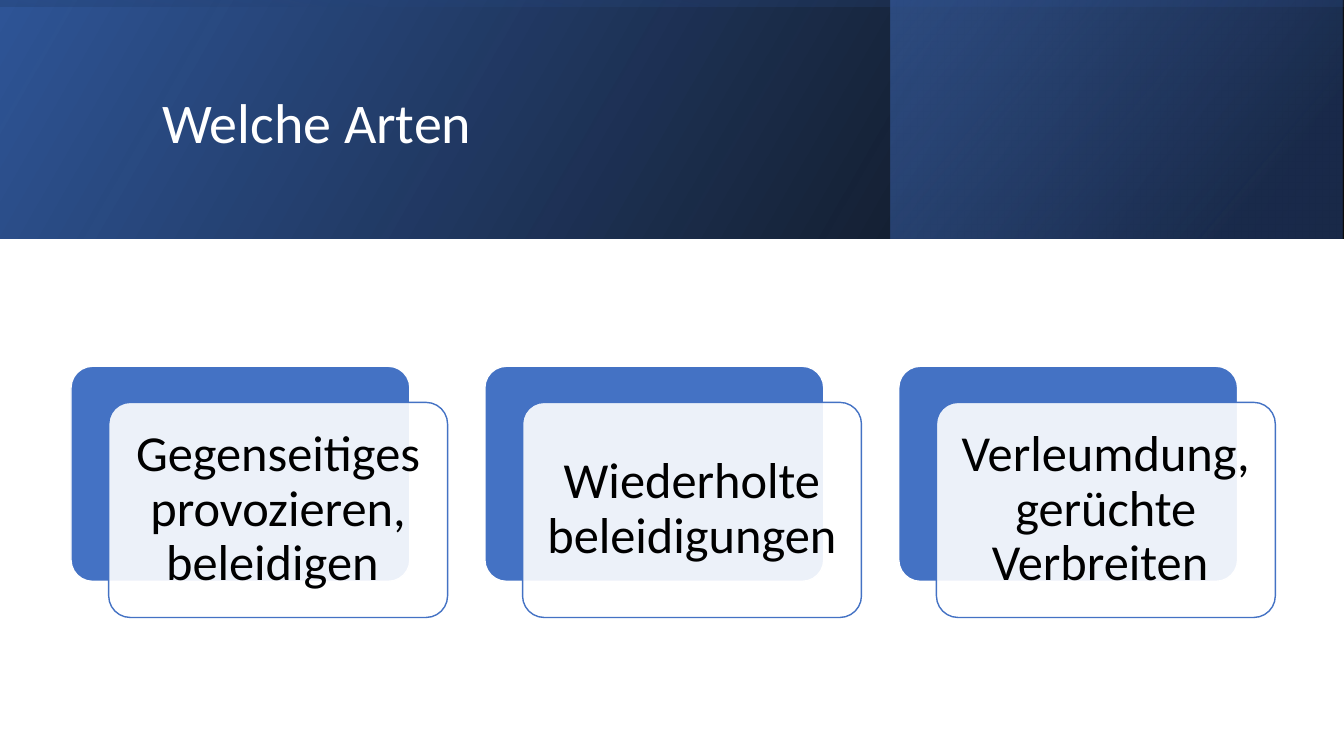
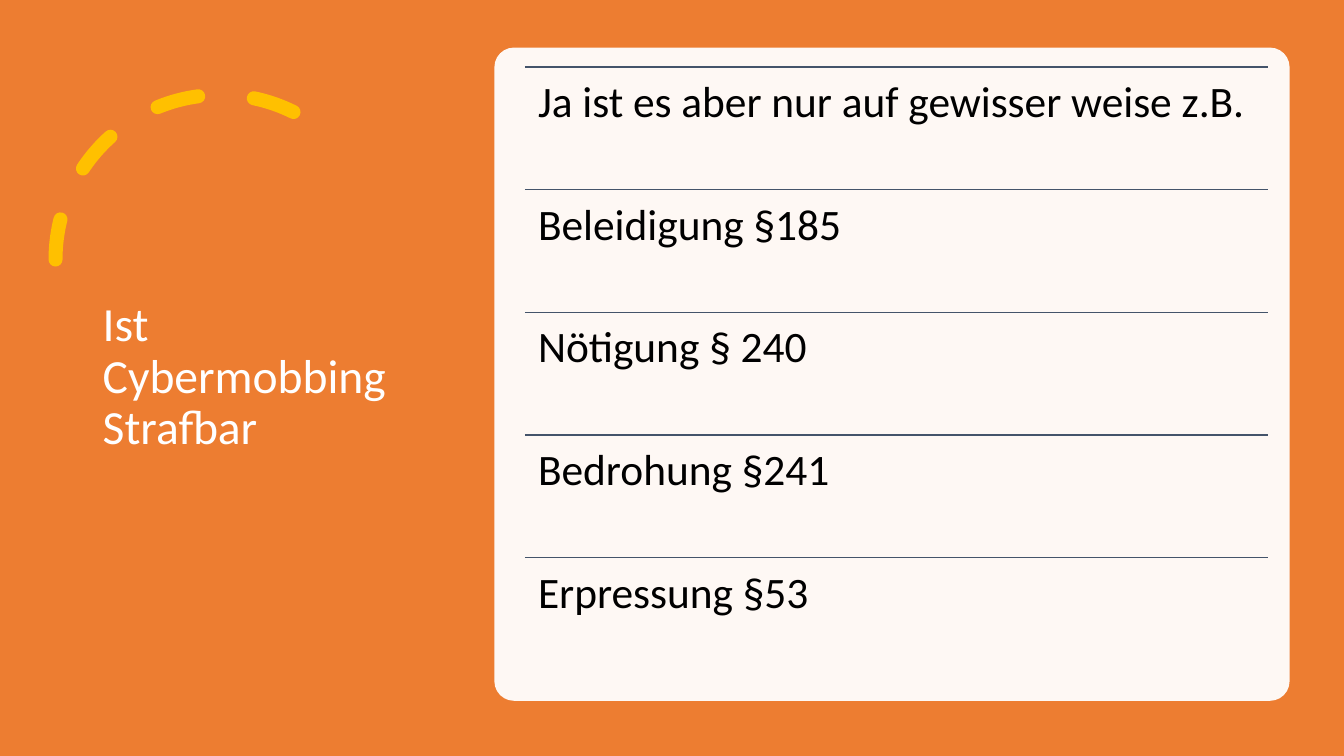
from lxml.etree import SubElement
from pptx import Presentation
from pptx.dml.color import RGBColor
from pptx.enum.dml import MSO_LINE
from pptx.enum.shapes import MSO_CONNECTOR, MSO_SHAPE
from pptx.enum.text import MSO_ANCHOR as Anchor, PP_ALIGN as Align
from pptx.oxml.ns import qn
from pptx.util import Cm, Pt

WHITE = RGBColor(0xFF, 0xFF, 0xFF)
BLACK = RGBColor(0x00, 0x00, 0x00)
BLUE = RGBColor(0x44, 0x72, 0xC4)
DARK_BLUE = RGBColor(0x2F, 0x55, 0x97)
NAVY = RGBColor(0x20, 0x38, 0x64)
ORANGE = RGBColor(0xED, 0x7D, 0x31)
GOLD = RGBColor(0xFF, 0xC0, 0x00)
SLATE = RGBColor(0x44, 0x54, 0x6A)

FONT = "Calibri"
WIDTH, HEIGHT = 33.87, 19.05
BAND_HEIGHT = 6.02
BAND_OFFSET = (WIDTH - BAND_HEIGHT) / 2

TYPES_TITLE = "Welche Arten"
TYPES = [
    "Gegenseitiges provozieren, beleidigen ",
    "Wiederholte beleidigungen ",
    "Verleumdung, gerüchte Verbreiten ",
]
LAW_TITLE = "Ist Cybermobbing Strafbar"
LAWS = [
    "Ja ist es aber nur auf gewisser weise z.B.",
    "Beleidigung §185",
    "Nötigung § 240",
    "Bedrohung §241",
    "Erpressung §53",
]

BANDS = [
    {"box": (0, 0, WIDTH, BAND_HEIGHT), "rotation": 0, "angle": 330,
     "stops": [(0, BLACK, 96), (100, DARK_BLUE, 100)]},
    {"box": (22.45, 0, 11.39, BAND_HEIGHT), "rotation": 0, "angle": 320,
     "stops": [(19, NAVY, 68), (100, BLUE, 48)]},
    {"box": (BAND_OFFSET, -BAND_OFFSET, BAND_HEIGHT, WIDTH), "rotation": 270, "angle": 350,
     "stops": [(23, DARK_BLUE, 16), (99, BLACK, 45)]},
]

TITLE_STYLE = {"color": WHITE, "anchor": Anchor.MIDDLE}
CARD_STYLE = {"size": 36, "align": Align.CENTER, "anchor": Anchor.MIDDLE, "margins": (0.38, 0.38)}
ROW_STYLE = {"size": 31, "margins": (0.33, 0.33)}

CARD_LEFT, CARD_TOP, CARD_WIDTH, CARD_HEIGHT = 1.79, 9.23, 8.54, 5.42
CARD_PITCH = 10.43
CARD_SHIFT_X, CARD_SHIFT_Y = 0.95, 0.91
ROW_LEFT, ROW_TOP, ROW_WIDTH, ROW_PITCH = 13.23, 1.69, 18.72, 3.09


def lengths(box):
    return [Cm(value) for value in box]


def write(shape, text, size, color=BLACK, align=Align.LEFT, anchor=Anchor.TOP, margins=(0.25, 0.13)):
    frame = shape.text_frame
    side, edge = (Cm(value) for value in margins)
    frame_format = {
        "word_wrap": True, "vertical_anchor": anchor,
        "margin_left": side, "margin_right": side,
        "margin_top": edge, "margin_bottom": edge,
    }
    for name, value in frame_format.items():
        setattr(frame, name, value)
    paragraph = frame.paragraphs[0]
    paragraph.alignment = align
    paragraph.line_spacing = 0.9
    run = paragraph.add_run()
    run.text = text
    for name, value in {"name": FONT, "size": Pt(size), "bold": False}.items():
        setattr(run.font, name, value)
    run.font.color.rgb = color


def add_text(slide, box, text, **style):
    write(slide.shapes.add_textbox(*lengths(box)), text, **style)


def set_alpha(color_element, percent):
    if percent < 100:
        SubElement(color_element, qn("a:alpha"), val=str(percent * 1000))


def add_shape(slide, kind, box, fill=None, line=None, alpha=100, line_width=1, adjustments=()):
    shape = slide.shapes.add_shape(kind, *lengths(box))
    shape.shadow.inherit = False
    for index, value in enumerate(adjustments):
        shape.adjustments[index] = value
    if fill is None:
        shape.fill.background()
    else:
        shape.fill.solid()
        shape.fill.fore_color.rgb = fill
        set_alpha(shape.element.spPr.find(qn("a:solidFill"))[0], alpha)
    if line is None:
        shape.line.fill.background()
    else:
        shape.line.color.rgb = line
        shape.line.width = Pt(line_width)
    return shape


def flip(shape):
    shape.element.spPr.find(qn("a:xfrm")).set("flipH", "1")


def add_band(slide, box, rotation, angle, stops):
    band = add_shape(slide, MSO_SHAPE.RECTANGLE, box)
    band.rotation = rotation
    flip(band)
    properties = band.element.spPr
    gradient = SubElement(properties, qn("a:gradFill"), rotWithShape="1")
    properties.replace(properties.find(qn("a:noFill")), gradient)
    stop_list = SubElement(gradient, qn("a:gsLst"))
    for position, color, alpha in stops:
        stop = SubElement(stop_list, qn("a:gs"), pos=str(position * 1000))
        set_alpha(SubElement(stop, qn("a:srgbClr"), val=str(color)), alpha)
    SubElement(gradient, qn("a:lin"), ang=str(angle * 60000), scaled="0")


def add_rule(slide, left, top, width):
    rule = slide.shapes.add_connector(
        MSO_CONNECTOR.STRAIGHT, *lengths((left, top, left + width, top)))
    rule.line.color.rgb = SLATE
    rule.line.width = Pt(1)
    SubElement(rule.element.spPr, qn("a:effectLst"))


def build_types(slide):
    for band in BANDS:
        add_band(slide, **band)
    add_text(slide, (3.84, 0.97, 27, 4.37), TYPES_TITLE, size=40, **TITLE_STYLE)
    for index, text in enumerate(TYPES):
        left = CARD_LEFT + index * CARD_PITCH
        add_shape(slide, MSO_SHAPE.ROUNDED_RECTANGLE, (left, CARD_TOP, CARD_WIDTH, CARD_HEIGHT),
                  fill=BLUE, line=WHITE, adjustments=[0.1])
        front_box = (left + CARD_SHIFT_X, CARD_TOP + CARD_SHIFT_Y, CARD_WIDTH, CARD_HEIGHT)
        front = add_shape(slide, MSO_SHAPE.ROUNDED_RECTANGLE, front_box,
                          fill=WHITE, line=BLUE, alpha=90, adjustments=[0.1])
        write(front, text, **CARD_STYLE)


def build_laws(slide):
    slide.background.fill.solid()
    slide.background.fill.fore_color.rgb = ORANGE
    arc = add_shape(slide, MSO_SHAPE.ARC, (1.4, 2.39, 8.3, 8.3),
                    line=GOLD, line_width=10, adjustments=[146.13, 0])
    flip(arc)
    arc.line.dash_style = MSO_LINE.DASH
    arc.element.spPr.find(qn("a:ln")).set("cap", "rnd")
    add_text(slide, (2.34, 1.78, 8.2, 15.47), LAW_TITLE, size=34, **TITLE_STYLE)
    add_shape(slide, MSO_SHAPE.ROUNDED_RECTANGLE, (12.46, 1.2, 20.04, 16.46),
              fill=WHITE, alpha=95, adjustments=[0.03])
    for index, text in enumerate(LAWS):
        top = ROW_TOP + index * ROW_PITCH
        add_rule(slide, ROW_LEFT, top, ROW_WIDTH)
        add_text(slide, (ROW_LEFT, top, ROW_WIDTH, ROW_PITCH), text, **ROW_STYLE)


def main():
    presentation = Presentation()
    presentation.slide_width, presentation.slide_height = lengths((WIDTH, HEIGHT))
    blank = presentation.slide_layouts[6]
    for build in (build_types, build_laws):
        build(presentation.slides.add_slide(blank))
    presentation.save("out.pptx")


if __name__ == "__main__":
    main()
